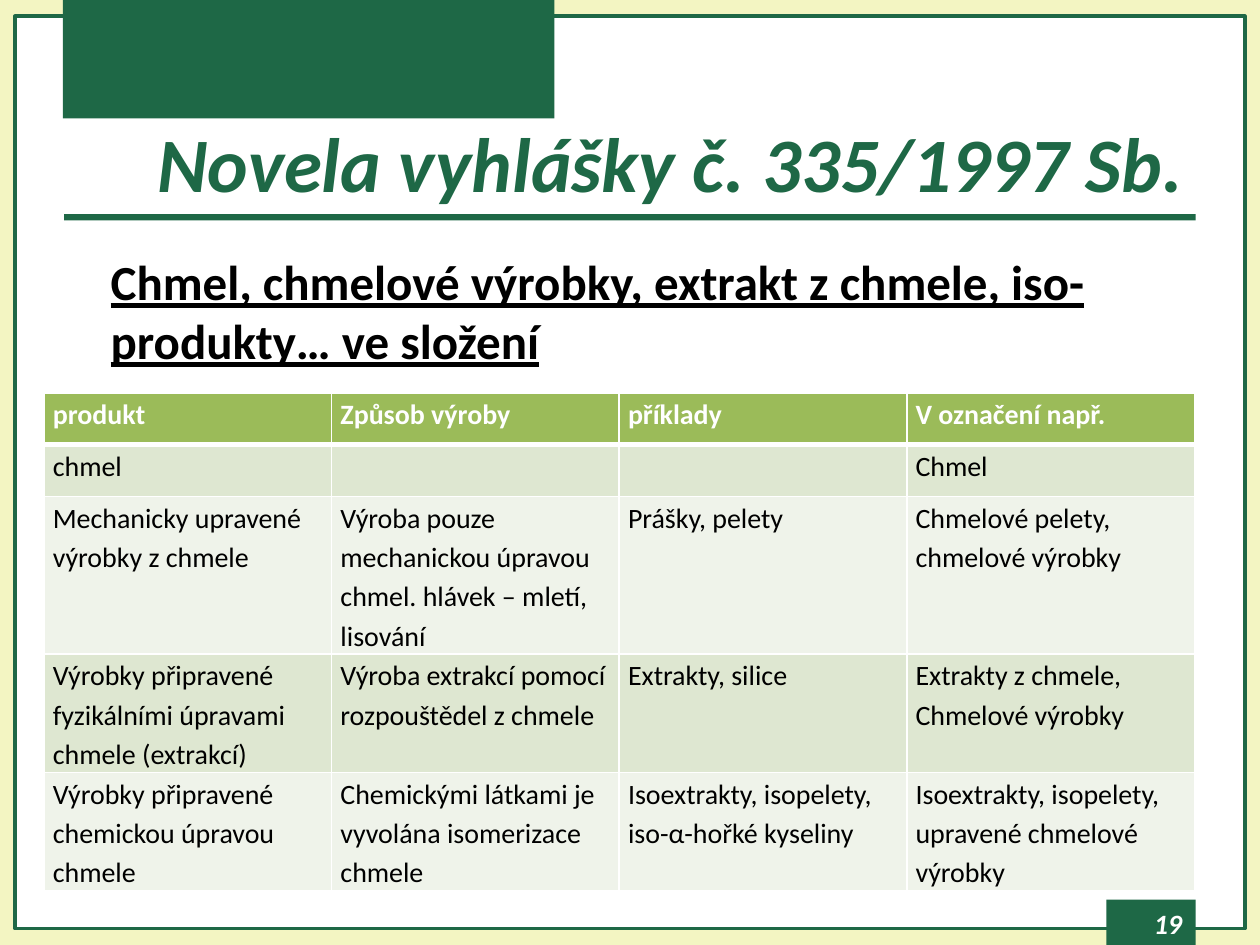
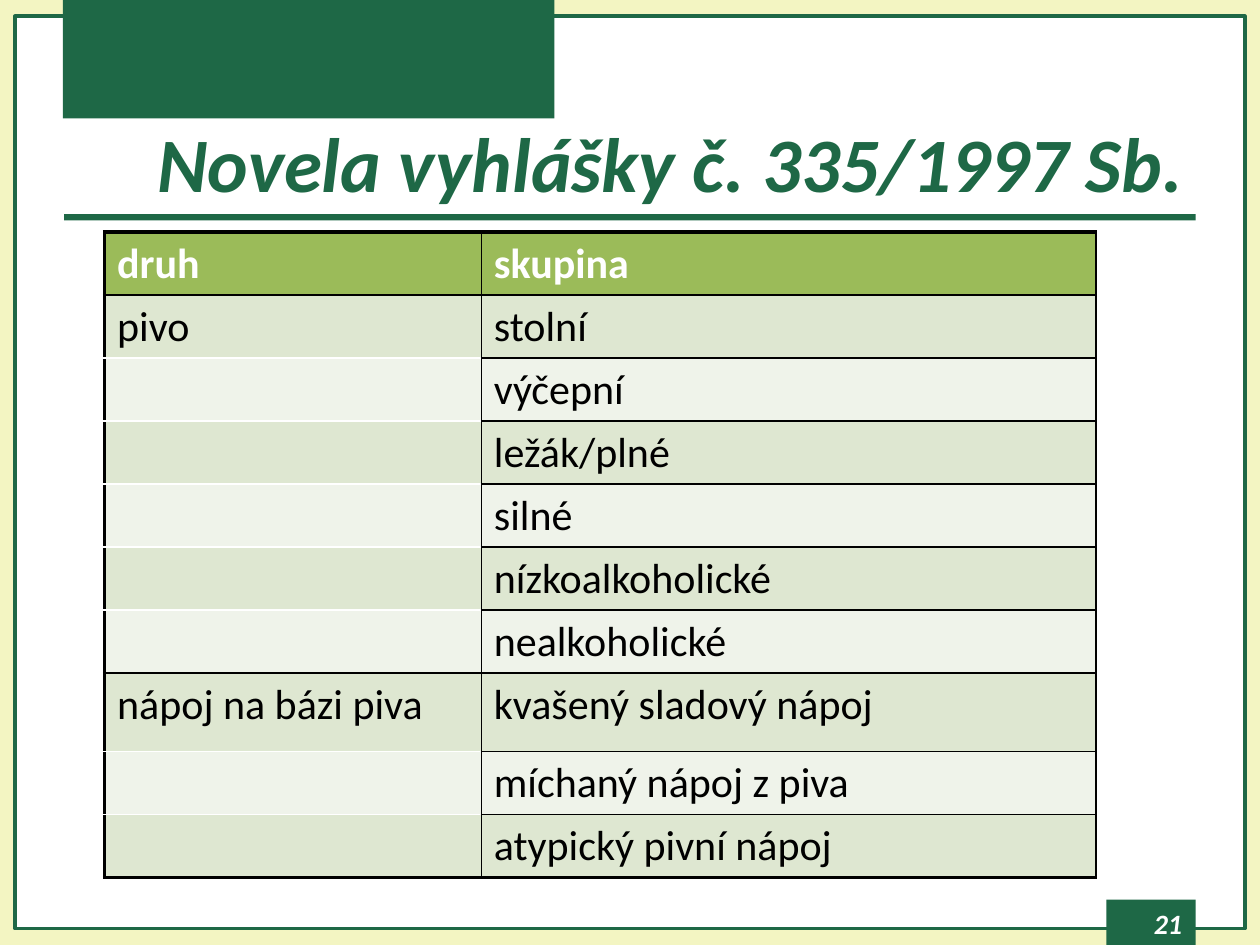
from dataclasses import dataclass
from typing import Callable, NamedTuple

from lxml.etree import SubElement
from pptx import Presentation
from pptx.dml.color import RGBColor
from pptx.enum.shapes import MSO_SHAPE as Preset
from pptx.enum.text import MSO_ANCHOR as Anchor, PP_ALIGN as Align
from pptx.oxml.ns import qn
from pptx.util import Inches, Pt

FONT = "Calibri"
GREEN, CREAM, WHITE, BLACK = "1E6846", "F3F5C2", "FFFFFF", "000000"
HEADER_FILL, ROW_FILLS = "9BBB59", ("DEE7D1", "EFF3EA")
TITLE = "Novela vyhlášky č. 335/1997 Sb."


class Area(NamedTuple):
    left: float
    top: float
    width: float
    height: float

    def lengths(self) -> list:
        return [Inches(value) for value in self]


class Band(NamedTuple):
    area: Area
    fill: str
    outline: str | None = None


class TextStyle(NamedTuple):
    size: float
    color: str
    bold: bool = False
    italic: bool = False
    underline: bool = False


class Edge(NamedTuple):
    color: str
    width: float


# An edge rule takes the cell texts, a boundary number and a column or row number.
EdgeRule = Callable[[list, int, int], Edge]


@dataclass
class TableDesign:
    corner: tuple[float, float]
    columns: list[float]
    rows: list[float]
    texts: list[list[str]]
    size: float
    margins: tuple[float, float]
    line_spacing: float
    horizontal_edge: EdgeRule
    vertical_edge: EdgeRule


BANDS = [
    Band(Area(0.12, 0.13, 9.76, 7.24), WHITE, GREEN),
    Band(Area(8.78, 7.14, 0.71, 0.36), GREEN),
    Band(Area(0.51, 1.7, 8.98, 0.05), GREEN),
    Band(Area(0.5, 0, 3.9, 0.94), GREEN),
]
TITLE_AREA = Area(0.5, 0.3, 9, 1.4)
TITLE_STYLE = TextStyle(44, GREEN, bold=True, italic=True)
NUMBER_AREA = Area(8.54, 7.14, 0.94, 0.37)
NUMBER_STYLE = TextStyle(16, WHITE, bold=True, italic=True)
SUBTITLE_AREA = Area(0.28, 1.95, 9.22, 1.1)
SUBTITLE_STYLE = TextStyle(28, BLACK, bold=True, underline=True)


def rgb(color: str) -> RGBColor:
    return RGBColor.from_string(color)


def add_span(para, text: str, style: TextStyle) -> None:
    span = para.add_run()
    span.text = text
    font = span.font
    font.name, font.size, font.color.rgb = FONT, Pt(style.size), rgb(style.color)
    font.bold, font.italic, font.underline = style.bold, style.italic, style.underline


def add_text(page, area: Area, text: str, style: TextStyle,
             align: Align = Align.RIGHT, anchor: Anchor = Anchor.BOTTOM):
    frame = page.shapes.add_textbox(*area.lengths()).text_frame
    frame.word_wrap = True
    frame.vertical_anchor = anchor
    para = frame.paragraphs[0]
    para.alignment = align
    add_span(para, text, style)
    return para


def add_band(page, band: Band) -> None:
    shape = page.shapes.add_shape(Preset.RECTANGLE, *band.area.lengths())
    shape.shadow.inherit = False
    shape.fill.solid()
    shape.fill.fore_color.rgb = rgb(band.fill)
    if band.outline:
        shape.line.color.rgb = rgb(band.outline)
        shape.line.width = Pt(2.25)
    else:
        shape.line.fill.background()


def add_page(deck, number: int):
    """Add a slide with the shared frame, title and page number."""
    page = deck.slides.add_slide(deck.slide_layouts[6])
    page.background.fill.solid()
    page.background.fill.fore_color.rgb = rgb(CREAM)
    for band in BANDS:
        add_band(page, band)
    add_text(page, NUMBER_AREA, str(number), NUMBER_STYLE)
    add_text(page, TITLE_AREA, TITLE, TITLE_STYLE)
    return page


def set_edges(cell, edges: dict[str, Edge]) -> None:
    """Draw the cell borders; they must precede the fill in the XML."""
    properties = cell._tc.get_or_add_tcPr()
    for side, edge in edges.items():
        line = SubElement(properties, qn(f"a:ln{side}"), w=str(Pt(edge.width)))
        SubElement(SubElement(line, qn("a:solidFill")), qn("a:srgbClr"), val=edge.color)


def fill_cell(cell, text: str, design: TableDesign, row: int) -> None:
    cell.fill.solid()
    cell.fill.fore_color.rgb = rgb(ROW_FILLS[(row - 1) % 2] if row else HEADER_FILL)
    side, end = design.margins
    cell.margin_left = cell.margin_right = Inches(side)
    cell.margin_top = cell.margin_bottom = Inches(end)
    style = TextStyle(design.size, BLACK if row else WHITE, bold=not row)
    frame = cell.text_frame
    for index, line in enumerate(text.split("\n")):
        para = frame.add_paragraph() if index else frame.paragraphs[0]
        para.line_spacing = design.line_spacing
        if line:
            add_span(para, line, style)
        else:
            para.font.size = Pt(design.size)


def add_table(page, design: TableDesign) -> None:
    texts = design.texts
    area = Area(*design.corner, sum(design.columns), sum(design.rows))
    table = page.shapes.add_table(len(texts), len(texts[0]), *area.lengths()).table
    for column, width in zip(table.columns, design.columns):
        column.width = Inches(width)
    for r, height in enumerate(design.rows):
        table.rows[r].height = Inches(height)
        for c, text in enumerate(texts[r]):
            cell = table.cell(r, c)
            set_edges(cell, {
                "L": design.vertical_edge(texts, c, r),
                "R": design.vertical_edge(texts, c + 1, r),
                "T": design.horizontal_edge(texts, r, c),
                "B": design.horizontal_edge(texts, r + 1, c),
            })
            fill_cell(cell, text, design, r)


def white_edge(texts: list, boundary: int, position: int) -> Edge:
    return Edge(WHITE, 1)


def header_edge(texts: list, boundary: int, column: int) -> Edge:
    return Edge(WHITE, 3 if boundary == 1 else 1)


def group_edge(texts: list, boundary: int, column: int) -> Edge:
    """Heavy outside, white above an empty cell, thin black elsewhere."""
    if boundary in (0, len(texts)):
        return Edge(BLACK, 2.25)
    return Edge(BLACK if texts[boundary][column] else WHITE, 1)


def heavy_left_edge(texts: list, boundary: int, row: int) -> Edge:
    return Edge(BLACK, 1 if boundary else 2.25)


HOP_PRODUCTS = TableDesign(
    corner=(0.35, 3.12),
    columns=[9.13 / 4] * 4,
    rows=[0.41, 0.41, 1.25, 0.94, 0.94],
    texts=[
        ["produkt", "Způsob výroby", "příklady", "V označení např."],
        ["chmel", "", "", "Chmel"],
        ["Mechanicky upravené výrobky z chmele",
         "Výroba pouze mechanickou úpravou chmel. hlávek – mletí, lisování",
         "Prášky, pelety",
         "Chmelové pelety, chmelové výrobky"],
        ["Výrobky připravené fyzikálními úpravami chmele (extrakcí)",
         "Výroba extrakcí pomocí rozpouštědel z chmele",
         "Extrakty, silice",
         "Extrakty z chmele,\nChmelové výrobky"],
        ["Výrobky připravené chemickou úpravou chmele",
         "Chemickými látkami je vyvolána isomerizace chmele",
         "Isoextrakty, isopelety, iso-α-hořké kyseliny",
         "Isoextrakty, isopelety, upravené chmelové výrobky"],
    ],
    size=16, margins=(0.07, 0), line_spacing=1.15,
    horizontal_edge=header_edge, vertical_edge=white_edge,
)

BEER_GROUPS = TableDesign(
    corner=(0.83, 1.84),
    columns=[2.99, 4.88],
    rows=[0.5] * 7 + [0.62, 0.5, 0.5],
    texts=[
        ["druh", "skupina"],
        ["pivo", "stolní"],
        ["", "výčepní"],
        ["", "ležák/plné"],
        ["", "silné"],
        ["", "nízkoalkoholické"],
        ["", "nealkoholické"],
        ["nápoj na bázi piva", "kvašený sladový nápoj"],
        ["", "míchaný nápoj z piva"],
        ["", "atypický pivní nápoj"],
    ],
    size=24, margins=(0.1, 0.05), line_spacing=1.0,
    horizontal_edge=group_edge, vertical_edge=heavy_left_edge,
)


def main() -> None:
    deck = Presentation()
    deck.slide_width, deck.slide_height = Inches(10), Inches(7.5)

    hop_page = add_page(deck, 19)
    subtitle = add_text(
        hop_page, SUBTITLE_AREA,
        "Chmel, chmelové výrobky, extrakt z chmele, iso-produkty… ve složení",
        SUBTITLE_STYLE, Align.LEFT, Anchor.TOP)
    subtitle._p.get_or_add_pPr().set("marL", str(Inches(0.5)))
    add_table(hop_page, HOP_PRODUCTS)

    beer_page = add_page(deck, 21)
    add_table(beer_page, BEER_GROUPS)

    deck.save("out.pptx")


if __name__ == "__main__":
    main()
